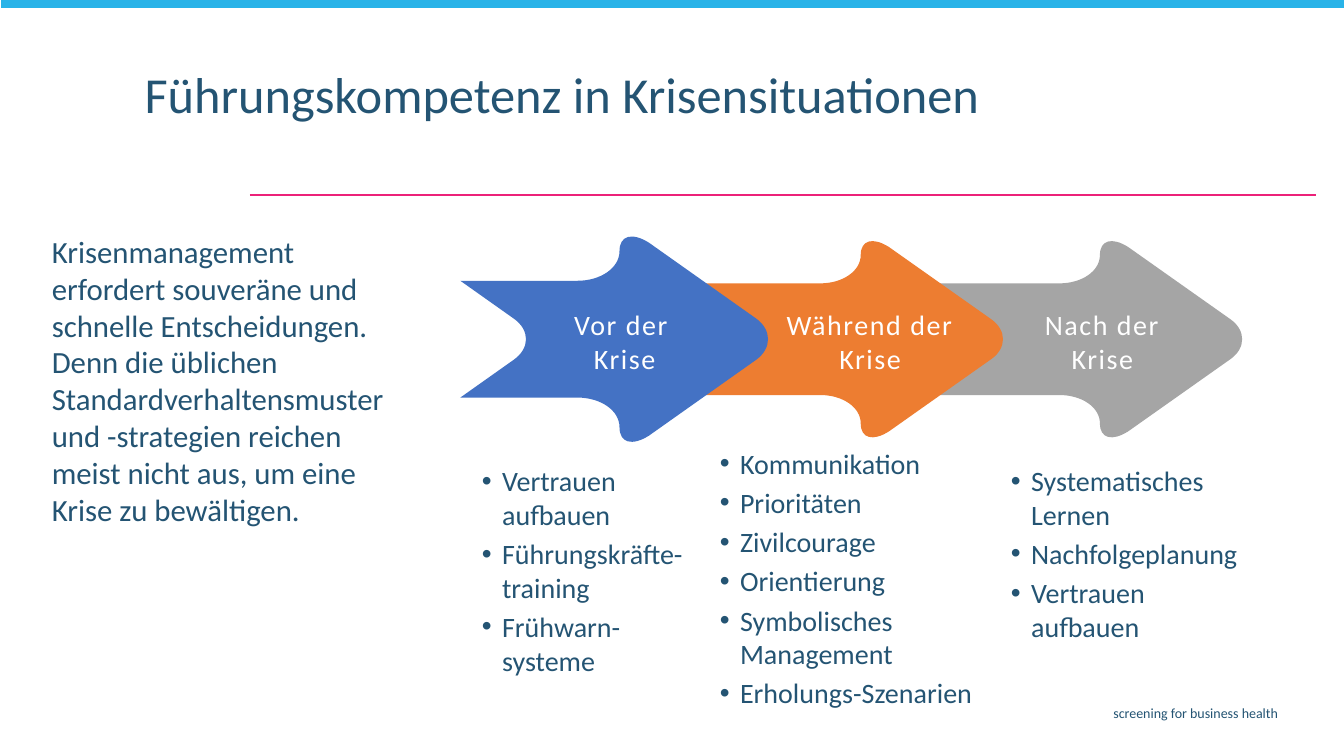
from lxml.etree import SubElement
from pptx import Presentation
from pptx.dml.color import RGBColor
from pptx.enum.shapes import MSO_CONNECTOR as Connector, MSO_SHAPE as Shape
from pptx.enum.text import MSO_ANCHOR as Anchor, MSO_AUTO_SIZE as AutoSize, PP_ALIGN as Align
from pptx.oxml.ns import qn
from pptx.util import Inches, Pt

COLORS = {
    "text": "245473", "white": "FFFFFF", "bar": "29B3E8", "rule": "EC2179",
    "before": "4472C4", "during": "ED7D31", "after": "A5A5A5",
}
FONT = "Calibri"
ARROW_MIDDLE = 44.87

TIP = [(101.6, 54.4), (101.6, 45.6), (93.4, 40)]
HEAD = [
    [(37.4, 3.1)],
    [(28.6, -2.1), (22, -0.5), (22, 7.2)],
    [(22, 15.4), (12.1, 21.6), (0, 21.6)],
]
ROUND_TAIL = {
    "left": -86.3,
    "upper": [[(-64.8, 21.6)], [(-76.9, 21.6), (-86.3, 28.2), (-86.3, 35.9)]],
    "middle": [(-86.3, 64.1)],
}
NOTCHED_TAIL = {
    "left": -65.3,
    "upper": [[(-61.1, 21.6)], [(-33.2, 40)]],
    "middle": [(-24.7, 45.6), (-24.7, 54.4), (-33.2, 60)],
}


def mirrored(start, segments):
    """Return the segments reversed and flipped about the middle line."""
    chain = [start] + [point for segment in segments for point in segment]
    rest = iter([(px, 100 - py) for px, py in reversed(chain)][1:])
    return [[next(rest) for _ in segment] for segment in reversed(segments)]


class Canvas:
    """Draw styled elements on one slide, with lengths in percent of its size."""

    def __init__(self, deck):
        self.deck = deck
        self.slide = deck.slides.add_slide(deck.slide_layouts[5])
        self.shapes = self.slide.shapes

    def x(self, share):
        return round(self.deck.slide_width * share / 100)

    def y(self, share):
        return round(self.deck.slide_height * share / 100)

    def box(self, left, top, width, height):
        return self.x(left), self.y(top), self.x(width), self.y(height)

    def paint(self, shape, color):
        shape.shadow.inherit = False
        shape.fill.solid()
        shape.fill.fore_color.rgb = RGBColor.from_string(COLORS[color])
        shape.line.fill.background()

    def bar(self, area, color):
        self.paint(self.shapes.add_shape(Shape.RECTANGLE, *self.box(*area)), color)

    def rule(self, left, right, top, color):
        rule = self.shapes.add_connector(
            Connector.STRAIGHT, self.x(left), self.y(top), self.x(right), self.y(top))
        rule.line.color.rgb = RGBColor.from_string(COLORS[color])
        rule.line.width = Pt(1.5)
        SubElement(rule._element.spPr, qn("a:effectLst"))

    def arrow(self, shoulder, head_width, height, tail, color):
        reach = 100 - tail["left"]
        left, top, width, depth = self.box(
            shoulder + head_width * tail["left"] / 100, ARROW_MIDDLE - height / 2,
            head_width * reach / 100, height)
        builder = self.shapes.build_freeform(left, top)
        builder.add_line_segments(
            [(left + width, top), (left + width, top + depth), (left, top + depth)])
        arrow = builder.convert_to_shape()

        upper = HEAD + tail["upper"]
        outline = [[(93.4, 60)], TIP] + upper + [tail["middle"]] + mirrored(TIP[-1], upper)
        route = arrow._element.spPr.find(".//" + qn("a:path"))
        for command in list(route):
            route.remove(command)
        for index, segment in enumerate(outline):
            kind = "a:cubicBezTo" if len(segment) == 3 else "a:lnTo" if index else "a:moveTo"
            command = SubElement(route, qn(kind))
            for px, py in segment:
                SubElement(command, qn("a:pt"), x=str(round(width * (px - tail["left"]) / reach)),
                           y=str(round(depth * py / 100)))
        SubElement(route, qn("a:close"))
        self.paint(arrow, color)

    def fill_frame(self, frame, texts, size, color="text", align=Align.LEFT, anchor=Anchor.TOP,
                   inset=0.05, gap=0, bullets=False, spacing=0, wrap=True,
                   fit=AutoSize.SHAPE_TO_FIT_TEXT):
        frame.word_wrap = wrap
        frame.auto_size = fit
        frame.vertical_anchor = anchor
        frame.margin_left = frame.margin_right = Inches(inset)
        frame.margin_top = frame.margin_bottom = Inches(inset)
        for index, text in enumerate(texts):
            paragraph = frame.add_paragraph() if index else frame.paragraphs[0]
            if bullets:
                props = paragraph._p.get_or_add_pPr()
                props.set("marL", str(Inches(0.2)))
                props.set("indent", str(-Inches(0.2)))
                SubElement(props, qn("a:buFont"), typeface="Arial")
                SubElement(props, qn("a:buChar"), char="•")
            paragraph.alignment = align
            paragraph.space_before = Pt(gap if index else 0)
            run = paragraph.add_run()
            run.text = text
            run.font.name = FONT
            run.font.size = Pt(size)
            run.font.color.rgb = RGBColor.from_string(COLORS[color])
            if spacing:
                run._r.get_or_add_rPr().set("spc", str(spacing))

    def title(self, area, text):
        heading = self.shapes.title
        heading.left, heading.top, heading.width, heading.height = self.box(*area)
        self.fill_frame(heading.text_frame, [text], 36, fit=AutoSize.NONE)
        heading.text_frame.paragraphs[0].line_spacing = 0.9

    def text(self, area, texts, size, **style):
        self.fill_frame(self.shapes.add_textbox(*self.box(*area)).text_frame, texts, size, **style)


def main():
    """Build the crisis leadership slide."""
    deck = Presentation()
    deck.slide_width, deck.slide_height = Inches(13.33), Inches(7.5)
    canvas = Canvas(deck)

    canvas.rule(18.6, 97.95, 25.8, "rule")
    canvas.bar((0.08, -0.27, 100, 1.33), "bar")
    canvas.text((27.72, 92.53, 67.74, 3.33), ["screening for business health"], 10,
                align=Align.RIGHT)
    canvas.title((10.38, 8.53, 72.62, 10.13), "Führungskompetenz in Krisensituationen")
    canvas.text((3.56, 30.2, 25.43, 47.07), [
        "Krisenmanagement erfordert souveräne und schnelle Entscheidungen. Denn die üblichen "
        "Standardverhaltensmuster und -strategien reichen meist nicht aus, um eine Krise zu "
        "bewältigen."], 22, inset=0.04)

    canvas.arrow(78.84, 13.65, 26, ROUND_TAIL, "after")
    canvas.arrow(61.04, 13.65, 26, ROUND_TAIL, "during")
    canvas.arrow(42.96, 14.25, 27.2, NOTCHED_TAIL, "before")

    phases = [
        (["Vor der ", "Krise"], (42.24, 40, 8.48, 10.27), (35.56, 60.83, 16.35, 28.8),
         ["Vertrauen aufbauen", "Führungskräfte-training", "Frühwarn-systeme"]),
        (["Während der Krise"], (57.39, 40.4, 14.7, 9.47), (53.26, 58.5, 20.33, 36.4),
         ["Kommunikation", "Prioritäten", "Zivilcourage", "Orientierung",
          "Symbolisches Management", "Erholungs-Szenarien"]),
        (["Nach der Krise"], (75.28, 40.4, 13.5, 9.47), (74.92, 60.8, 17.78, 24.4),
         ["Systematisches Lernen", "Nachfolgeplanung", "Vertrauen aufbauen"]),
    ]
    for label, label_area, list_area, measures in phases:
        canvas.text(label_area, label, 20, color="white", align=Align.CENTER,
                    anchor=Anchor.MIDDLE, spacing=110, wrap=len(label) == 1)
        canvas.text(list_area, measures, 20, inset=0.04, gap=4, bullets=True)

    deck.save("out.pptx")


if __name__ == "__main__":
    main()
